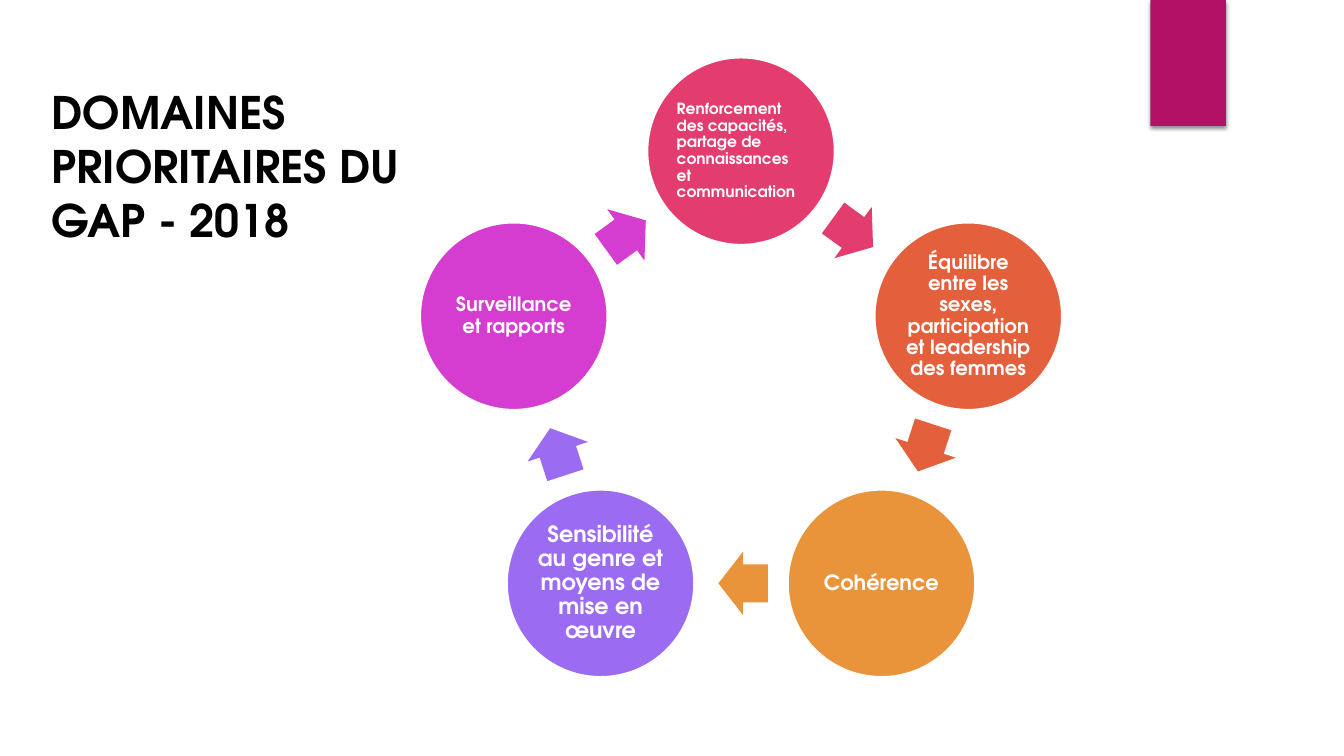
from dataclasses import dataclass
from math import cos, radians, sin

from lxml.etree import SubElement
from pptx import Presentation
from pptx.dml.color import RGBColor
from pptx.enum.shapes import MSO_SHAPE as Preset
from pptx.enum.text import MSO_ANCHOR as Anchor, MSO_AUTO_SIZE as AutoSize, PP_ALIGN as Align
from pptx.oxml.ns import qn
from pptx.shapes.autoshape import Shape
from pptx.slide import Slide
from pptx.util import Emu, Pt

PX = 9144  # EMU per px, 100 px to the inch


@dataclass(frozen=True)
class Theme:
    font: str = "TeX Gyre Adventor"
    ink: str = "000000"
    white: str = "FFFFFF"
    bar: str = "B31166"
    title_size: int = 32
    outline: float = 1.5


@dataclass(frozen=True)
class Priority:
    label: str
    color: str
    size: int
    align: Align = Align.CENTER


@dataclass(frozen=True)
class Ring:
    center_x: int = 735
    center_y: int = 387
    radius: int = 237
    circle: int = 186
    arrow_length: int = 49
    arrow_width: int = 63
    arrow_setback: int = 2


THEME = Theme()
RING = Ring()
PRIORITIES = [
    Priority("Renforcement des capacités, partage de connaissances et communication",
             "E33D6F", 11, Align.LEFT),
    Priority("Équilibre entre les sexes, participation et leadership des femmes", "E45F3C", 14),
    Priority("Cohérence", "E9943A", 15),
    Priority("Sensibilité au genre et moyens de mise en œuvre", "9B6BF2", 16),
    Priority("Surveillance et rapports", "D53DD0", 14),
]


def px(length: float) -> Emu:
    return Emu(round(length * PX))


def add_filled(slide: Slide, preset: Preset, left: float, top: float,
               width: int, height: int, color: str) -> Shape:
    shape = slide.shapes.add_shape(preset, px(left), px(top), px(width), px(height))
    shape.shadow.inherit = False
    shape.fill.solid()
    shape.fill.fore_color.rgb = RGBColor.from_string(color)
    shape.line.fill.background()
    return shape


def style_text(shape: Shape, size: int, color: str, align: Align) -> None:
    paragraph = shape.text_frame.paragraphs[0]
    paragraph.alignment = align
    for run in paragraph.runs:
        run.font.name = THEME.font
        run.font.size = Pt(size)
        run.font.bold = True
        run.font.color.rgb = RGBColor.from_string(color)


def add_bar(slide: Slide) -> None:
    bar = add_filled(slide, Preset.RECTANGLE, 1141, 0, 75, 125, THEME.bar)
    effects = bar._element.spPr.find(qn("a:effectLst"))
    shadow = SubElement(effects, qn("a:outerShdw"), blurRad=str(Pt(3)), dist=str(Pt(2)),
                        dir="5400000", rotWithShape="0")
    tint = SubElement(shadow, qn("a:srgbClr"), val=THEME.ink)
    SubElement(tint, qn("a:alpha"), val="45000")


def add_title(slide: Slide, wording: str) -> None:
    title = slide.shapes.title
    title.left, title.top, title.width, title.height = px(41), px(79), px(405), px(172)
    frame = title.text_frame
    frame.text = wording
    frame.word_wrap = True
    frame.auto_size = AutoSize.SHAPE_TO_FIT_TEXT
    frame.vertical_anchor = Anchor.TOP
    style_text(title, THEME.title_size, THEME.ink, Align.LEFT)


def add_circle(slide: Slide, priority: Priority, angle: float) -> None:
    left = RING.center_x + RING.radius * sin(angle) - RING.circle / 2
    top = RING.center_y - RING.radius * cos(angle) - RING.circle / 2
    circle = add_filled(slide, Preset.OVAL, left, top, RING.circle, RING.circle, priority.color)
    circle.line.color.rgb = RGBColor.from_string(THEME.white)
    circle.line.width = Pt(THEME.outline)
    frame = circle.text_frame
    frame.text = priority.label
    frame.word_wrap = True
    frame.vertical_anchor = Anchor.MIDDLE
    frame.margin_left = frame.margin_right = frame.margin_top = frame.margin_bottom = px(2)
    frame.paragraphs[0].line_spacing = 0.9
    frame.paragraphs[0].space_after = Pt(round(0.35 * priority.size))
    style_text(circle, priority.size, THEME.white, priority.align)


def add_arrow(slide: Slide, color: str, degrees: float, half_step: float) -> None:
    """Place an arrow between two neighbours, set slightly back along its direction."""
    angle = radians(degrees)
    reach = RING.radius * cos(radians(half_step))
    x = RING.center_x + reach * sin(angle) - RING.arrow_setback * cos(angle)
    y = RING.center_y - reach * cos(angle) - RING.arrow_setback * sin(angle)
    arrow = add_filled(slide, Preset.RIGHT_ARROW, x - RING.arrow_length / 2,
                       y - RING.arrow_width / 2, RING.arrow_length, RING.arrow_width, color)
    arrow.adjustments[0], arrow.adjustments[1] = 0.6, 0.5
    arrow.rotation = degrees


def main() -> None:
    deck = Presentation()
    deck.slide_width, deck.slide_height = px(1333), px(750)
    slide = deck.slides.add_slide(deck.slide_layouts[5])

    # Corner bar and title
    add_bar(slide)
    add_title(slide, "DOMAINES PRIORITAIRES DU GAP - 2018")

    # Cycle of priorities, clockwise from the top
    step = 360 / len(PRIORITIES)
    for index, priority in enumerate(PRIORITIES):
        add_circle(slide, priority, radians(index * step))
        add_arrow(slide, priority.color, (index + 0.5) * step, step / 2)

    deck.save("out.pptx")


if __name__ == "__main__":
    main()
